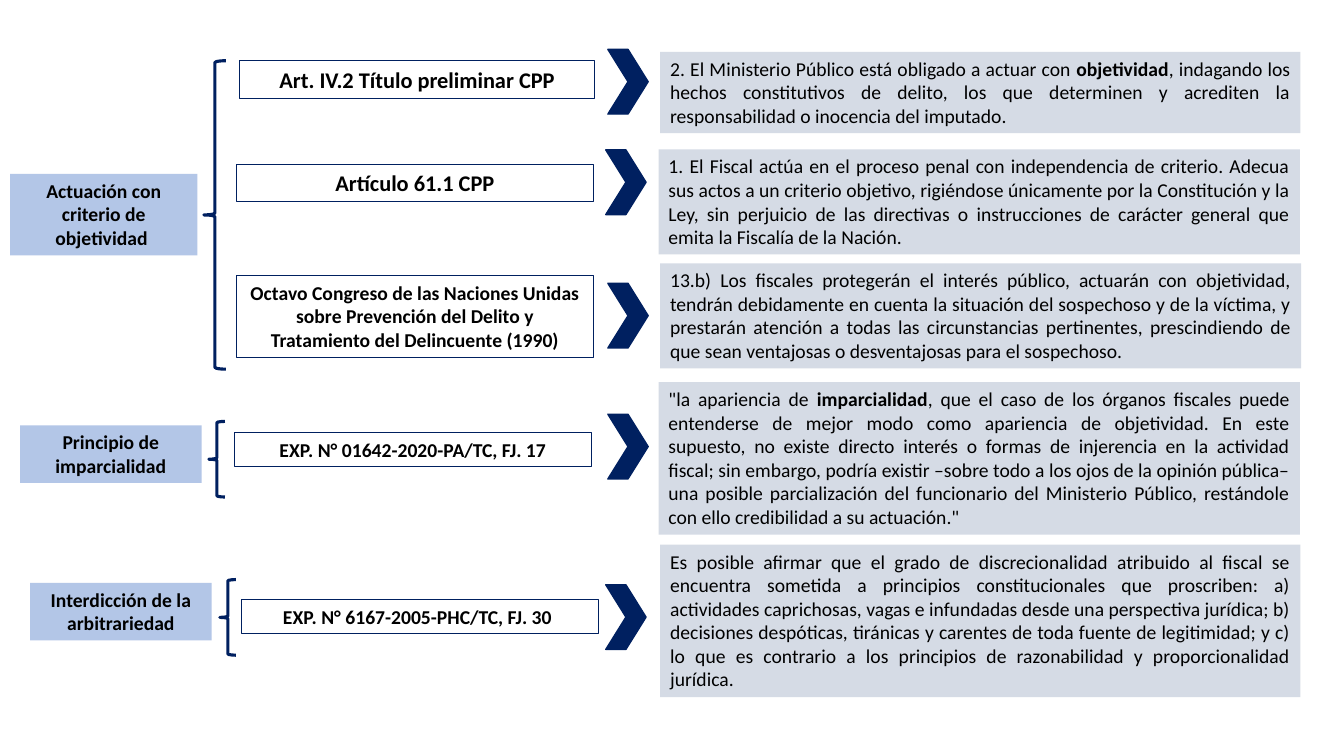
from dataclasses import dataclass

from pptx import Presentation
from pptx.dml.color import RGBColor
from pptx.enum.shapes import MSO_SHAPE
from pptx.enum.text import MSO_ANCHOR, MSO_AUTO_SIZE, PP_ALIGN
from pptx.util import Pt


@dataclass(frozen=True)
class Theme:
    font: str = "Calibri"
    body_size: float = 14
    article_size: float = 16
    text: RGBColor = RGBColor(0x00, 0x00, 0x00)
    navy: RGBColor = RGBColor(0x00, 0x20, 0x60)
    principle_fill: RGBColor = RGBColor(0xB3, 0xC6, 0xE7)
    quote_fill: RGBColor = RGBColor(0xD5, 0xDB, 0xE5)
    source_line: float = 0.75
    chevron_line: float = 1
    brace_line: float = 2.25


class Board:
    def __init__(self, slide, theme):
        self.slide = slide
        self.theme = theme

    def text_box(self, place, runs, size, align):
        box = self.slide.shapes.add_textbox(*map(Pt, place))
        frame = box.text_frame
        frame.word_wrap = True
        frame.auto_size = MSO_AUTO_SIZE.SHAPE_TO_FIT_TEXT
        frame.vertical_anchor = MSO_ANCHOR.TOP
        paragraph = frame.paragraphs[0]
        paragraph.alignment = align
        for words, bold in runs:
            run = paragraph.add_run()
            run.text = words
            run.font.name = self.theme.font
            run.font.size = Pt(size)
            run.font.bold = bold
            run.font.color.rgb = self.theme.text
        return box

    def filled(self, box, color):
        box.fill.solid()
        box.fill.fore_color.rgb = color

    def outlined(self, box, width):
        box.line.color.rgb = self.theme.navy
        box.line.width = Pt(width)

    def principle(self, place, words):
        box = self.text_box(place, [(words, True)], self.theme.body_size, PP_ALIGN.CENTER)
        self.filled(box, self.theme.principle_fill)

    def source(self, place, words, size):
        box = self.text_box(place, [(words, True)], size, PP_ALIGN.CENTER)
        self.outlined(box, self.theme.source_line)

    def quote(self, place, runs):
        box = self.text_box(place, runs, self.theme.body_size, PP_ALIGN.JUSTIFY)
        self.filled(box, self.theme.quote_fill)

    def brace(self, place):
        brace = self.slide.shapes.add_shape(MSO_SHAPE.LEFT_BRACE, *map(Pt, place))
        brace.shadow.inherit = False
        brace.fill.background()
        self.outlined(brace, self.theme.brace_line)

    def chevron(self, left, top):
        chevron = self.slide.shapes.add_shape(
            MSO_SHAPE.CHEVRON, Pt(left), Pt(top), Pt(28.8), Pt(46.2))
        chevron.shadow.inherit = False
        self.filled(chevron, self.theme.navy)
        self.outlined(chevron, self.theme.chevron_line)


THEME = Theme()

PRINCIPLES = [
    ((7.2, 124.2, 133.9, 58.2), "Actuación con criterio de objetividad ",
     (145.6, 43.4, 15.8, 220.3)),
    ((14.4, 303.8, 129.6, 41.2), "Principio de imparcialidad",
     (149.2, 301, 11.5, 54)),
    ((21.6, 416.3, 129.6, 41.2), "Interdicción de la arbitrariedad",
     (157, 414, 11.5, 54)),
]

SOURCES = [
    ((171.2, 43.4, 253.6, 26.7), "Art. IV.2 Título preliminar CPP", THEME.article_size),
    ((169, 117.5, 254.9, 26.7), "Artículo 61.1 CPP", THEME.article_size),
    ((169, 196.9, 254.9, 58.2),
     "Octavo Congreso de las Naciones Unidas sobre Prevención del Delito y "
     "Tratamiento del Delincuente (1990)", THEME.body_size),
    ((167.5, 309, 254.9, 24.2), "EXP. N° 01642-2020-PA/TC, FJ. 17", THEME.body_size),
    ((172.4, 428.4, 254.9, 24.2), "EXP. N° 6167-2005-PHC/TC, FJ. 30 ", THEME.body_size),
]

CHEVRONS = [(434.2, 35.3), (432.7, 107.1), (434.2, 202.4), (434.2, 295.9), (432.7, 417.7)]

QUOTES = [
    ((471.6, 37, 457.2, 58.2), [
        ("2. El Ministerio Público está obligado a actuar con ", False),
        ("objetividad", True),
        (", indagando los hechos constitutivos de delito, los que determinen y "
         "acrediten la responsabilidad o inocencia del imputado. ", False)]),
    ((470.4, 106.7, 458.2, 75.1), [
        ("1. El Fiscal actúa en el proceso penal con independencia de criterio. "
         "Adecua sus actos a un criterio objetivo, rigiéndose únicamente por la "
         "Constitución y la Ley, sin perjuicio de las directivas o instrucciones de "
         "carácter general que emita la Fiscalía de la Nación.", False)]),
    ((471.6, 188.1, 457.9, 75.1), [
        ("13.b) Los fiscales protegerán el interés público, actuarán con objetividad, "
         "tendrán debidamente en cuenta la situación del sospechoso y de la víctima, "
         "y prestarán atención a todas las circunstancias pertinentes, prescindiendo "
         "de que sean ventajosas o desventajosas para el sospechoso.", False)]),
    ((470.4, 272.9, 458.2, 109), [
        ("\"la apariencia de ", False),
        ("imparcialidad", True),
        (", que el caso de los órganos fiscales puede entenderse de mejor modo como "
         "apariencia de objetividad. En este supuesto, no existe directo interés o "
         "formas de injerencia en la actividad fiscal; sin embargo, podría existir "
         "–sobre todo a los ojos de la opinión pública– una posible parcialización "
         "del funcionario del Ministerio Público, restándole con ello credibilidad "
         "a su actuación.\"", False)]),
    ((471.6, 389, 457.2, 109), [
        ("Es posible afirmar que el grado de discrecionalidad atribuido al fiscal se "
         "encuentra sometida a principios constitucionales que proscriben: "
         "a) actividades caprichosas, vagas e infundadas desde una perspectiva "
         "jurídica; b) decisiones despóticas, tiránicas y carentes de toda fuente de "
         "legitimidad; y c) lo que es contrario a los principios de razonabilidad y "
         "proporcionalidad jurídica. ", False)]),
]


def main():
    deck = Presentation()
    deck.slide_width = Pt(960)
    deck.slide_height = Pt(540)
    board = Board(deck.slides.add_slide(deck.slide_layouts[6]), THEME)

    for place, words, brace_place in PRINCIPLES:
        board.principle(place, words)
        board.brace(brace_place)
    for source, chevron, quote in zip(SOURCES, CHEVRONS, QUOTES):
        board.source(*source)
        board.chevron(*chevron)
        board.quote(*quote)

    deck.save("out.pptx")


if __name__ == "__main__":
    main()
